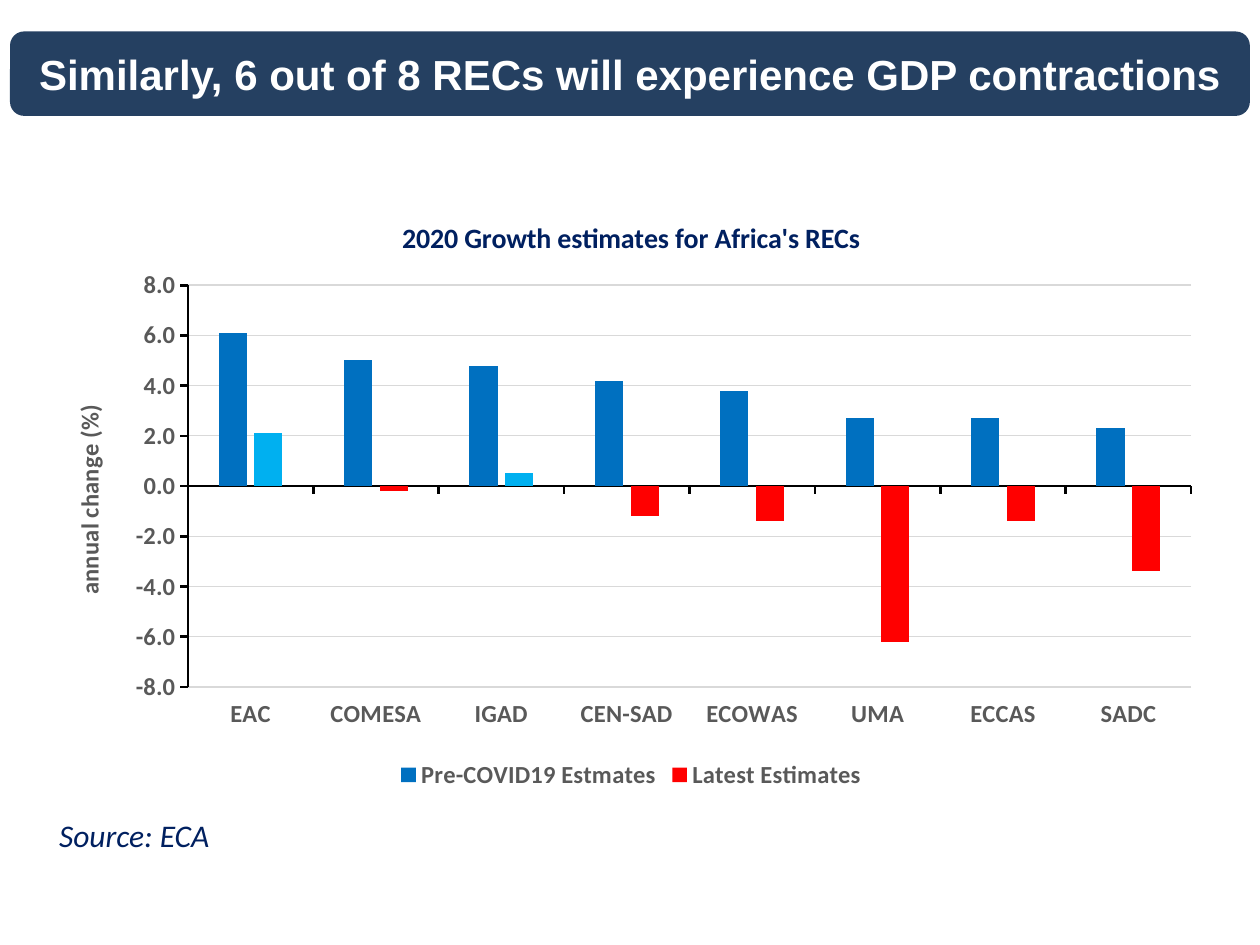
from lxml.etree import SubElement
from pptx import Presentation
from pptx.chart.data import CategoryChartData
from pptx.dml.color import RGBColor
from pptx.enum.chart import XL_CHART_TYPE, XL_LEGEND_POSITION, XL_TICK_LABEL_POSITION, XL_TICK_MARK
from pptx.enum.shapes import MSO_SHAPE
from pptx.enum.text import MSO_ANCHOR, PP_ALIGN
from pptx.oxml.ns import qn
from pptx.util import Inches, Pt


def color(hex_code):
    return RGBColor.from_string(hex_code)


def style(font, size, hex_code, name="Calibri", bold=True, italic=False):
    font.size, font.name, font.bold, font.italic = Pt(size), name, bold, italic
    font.color.rgb = color(hex_code)


prs = Presentation()
prs.slide_width, prs.slide_height = Inches(10), Inches(7.5)
slide = prs.slides.add_slide(prs.slide_layouts[5])

banner_box = Inches(0.08), Inches(0.25), Inches(9.84), Inches(0.67)
banner = slide.shapes.add_shape(MSO_SHAPE.ROUNDED_RECTANGLE, *banner_box)
banner.shadow.inherit = False
banner.fill.solid()
banner.fill.fore_color.rgb = color("254061")
banner.line.fill.background()

headline = slide.shapes.title
headline.left, headline.top, headline.width, headline.height = banner_box
headline._element.addprevious(banner._element)
headline.text_frame.word_wrap = True
headline.text_frame.vertical_anchor = MSO_ANCHOR.MIDDLE
headline_line = headline.text_frame.paragraphs[0]
headline_line.alignment = PP_ALIGN.CENTER
headline_run = headline_line.add_run()
headline_run.text = "Similarly, 6 out of 8 RECs will experience GDP contractions"
style(headline_run.font, 24, "FFFFFF", name="Arial")

source = slide.shapes.add_textbox(Inches(0.37), Inches(6.43), Inches(4.02), Inches(0.4))
source.text_frame.word_wrap = True
source_run = source.text_frame.paragraphs[0].add_run()
source_run.text = "Source: ECA"
style(source_run.font, 18, "002060", bold=False, italic=True)

growth = CategoryChartData(number_format="0.0")
growth.categories = ["EAC", "COMESA", "IGAD", "CEN-SAD", "ECOWAS", "UMA", "ECCAS", "SADC"]
growth.add_series("Pre-COVID19 Estmates", [6.1, 5, 4.8, 4.2, 3.8, 2.7, 2.7, 2.3])
growth.add_series("Latest Estimates", [2.1, -0.2, 0.5, -1.2, -1.4, -6.2, -1.4, -3.4])
chart = slide.shapes.add_chart(
    XL_CHART_TYPE.COLUMN_CLUSTERED,
    Inches(0.38), Inches(1.55), Inches(9.26), Inches(4.76), growth,
).chart
style(chart.font, 10, "000000", bold=False)

plot = chart.plots[0]
plot.gap_width, plot.overlap, plot.vary_by_categories = 219, -27, False
for series, fill in zip(plot.series, ["0070C0", "FF0000"]):
    series.invert_if_negative = False
    series.format.fill.solid()
    series.format.fill.fore_color.rgb = color(fill)
latest = plot.series[1]
for index, value in enumerate(latest.values):
    if value > 0:
        point_fill = latest.points[index].format.fill
        point_fill.solid()
        point_fill.fore_color.rgb = color("00B0F0")

regions, change = chart.category_axis, chart.value_axis
for axis in (regions, change):
    axis.major_tick_mark = XL_TICK_MARK.OUTSIDE
    axis.minor_tick_mark = XL_TICK_MARK.NONE
    style(axis.tick_labels.font, 14, "595959")
    axis.format.line.color.rgb = color("000000")
    axis.format.line.width = Pt(1.5)
regions.tick_label_position = XL_TICK_LABEL_POSITION.LOW
change.minimum_scale, change.maximum_scale, change.major_unit = -8, 8, 2
change.tick_labels.number_format = "0.0"
change.tick_labels.number_format_is_linked = False
change.major_gridlines.format.line.color.rgb = color("D9D9D9")
change.major_gridlines.format.line.width = Pt(0.75)

chart.has_title = True
for title, text, size, ink in (
    (chart.chart_title, "2020 Growth estimates for Africa's RECs", 16, "002060"),
    (change.axis_title, "annual change (%)", 14, "595959"),
):
    title_run = title.text_frame.paragraphs[0].add_run()
    title_run.text = text
    style(title_run.font, size, ink)
chart.chart_title.include_in_layout = False

chart.has_legend = True
chart.legend.position = XL_LEGEND_POSITION.BOTTOM
chart.legend.include_in_layout = False
style(chart.legend.font, 14, "595959")

plot_area = chart._chartSpace.find(".//" + qn("c:plotArea"))
for old_layout in plot_area.findall(qn("c:layout")):
    plot_area.remove(old_layout)
layout = SubElement(plot_area, qn("c:layout"))
plot_area.insert(0, layout)
manual = SubElement(layout, qn("c:manualLayout"))
for tag, value in (
    ("layoutTarget", "inner"), ("xMode", "edge"), ("yMode", "edge"),
    ("x", "0.12"), ("y", "0.15"), ("w", "0.86"), ("h", "0.67"),
):
    SubElement(manual, qn("c:" + tag)).set("val", value)

prs.save("out.pptx")
